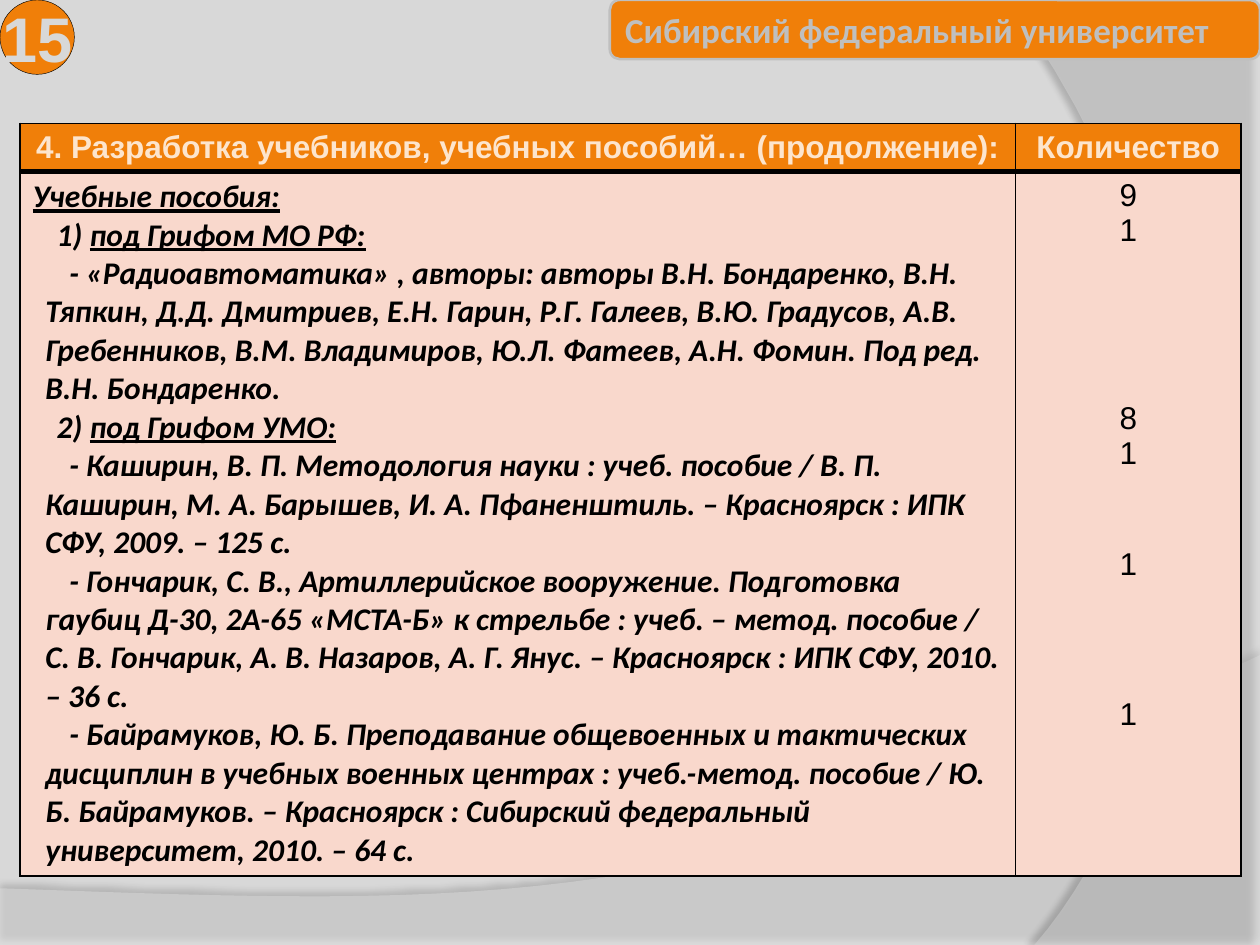
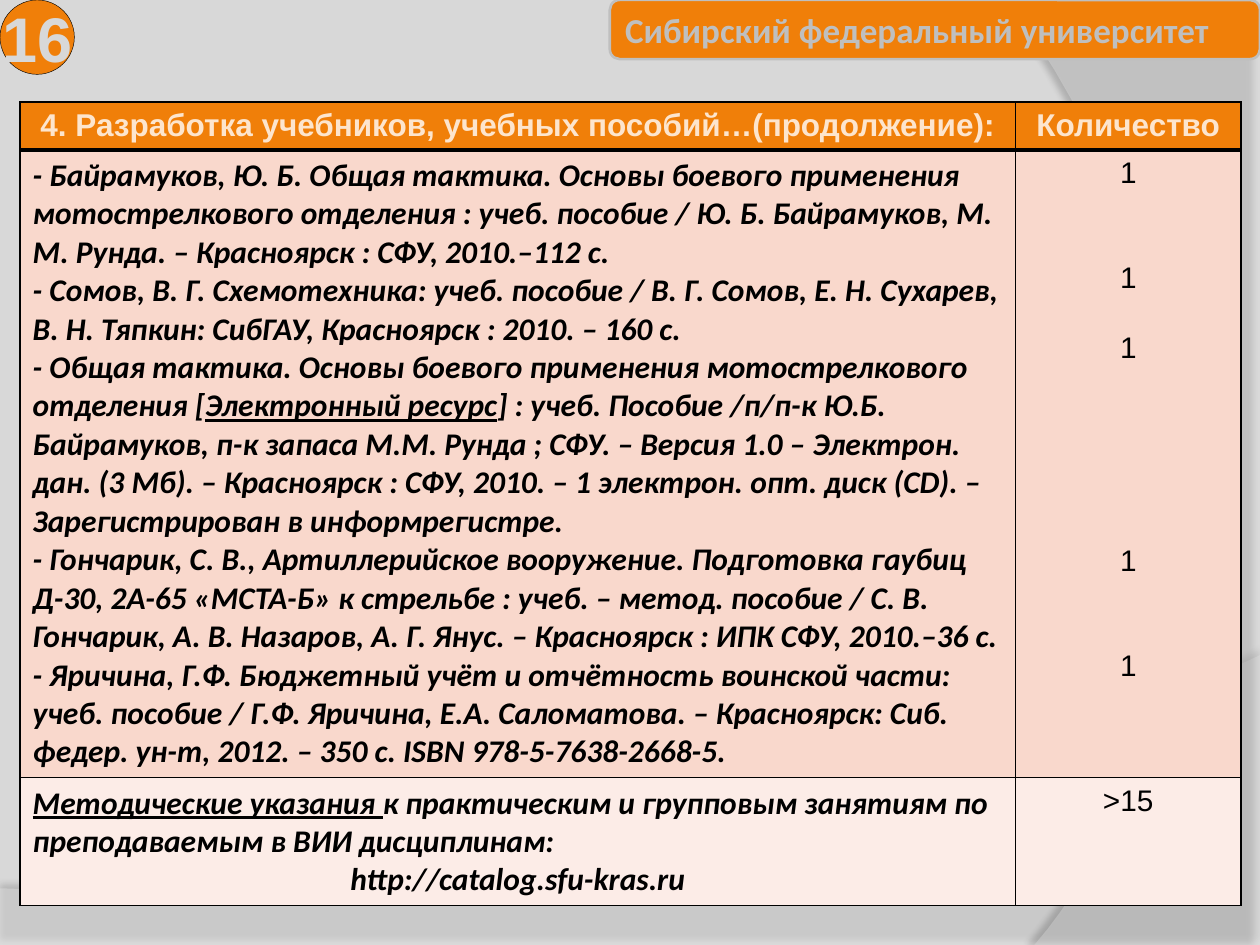
from dataclasses import dataclass

from lxml import etree
from pptx import Presentation
from pptx.dml import color
from pptx.enum import shapes, text
from pptx.oxml import ns
from pptx.util import Pt


@dataclass(frozen=True)
class Theme:
    background: str = "D8D8D8"
    accent: str = "F07F09"
    banner_edge: str = "BFBFBF"
    header_text: str = "FDE5CD"
    ink: str = "000000"
    body_fill: str = "F9D8CC"
    light_fill: str = "FCECE7"
    wave_fill: str = "E1E1E1"
    arc_fill: str = "DCDCDC"
    serial_font: str = "Arial"
    book_font: str = "Calibri"
    number_size: int = 36
    banner_size: int = 20
    table_size: int = 18


THEME = Theme()
CENTER = text.PP_ALIGN.CENTER
MIDDLE = text.MSO_ANCHOR.MIDDLE
COLUMNS = (568.8, 128.9)
TABLE_LEFT = 11.5
BLANK_LINE = 1.21
OUTLINE, HEADER_RULE = 1, 3

HANGING = (7.2, 13.7)
NUMBERED = (13.7, 0)
FLUSH = (0, 0)

GRIF_BOOKS = [
    ("_Учебные пособия:_", FLUSH),
    ("1) _под Грифом МО РФ:_", NUMBERED),
    ("- «Радиоавтоматика» , авторы: авторы В.Н. Бондаренко, В.Н. Тяпкин, Д.Д. Дмитриев, "
     "Е.Н. Гарин, Р.Г. Галеев, В.Ю. Градусов, А.В. Гребенников, В.М. Владимиров, "
     "Ю.Л. Фатеев, А.Н. Фомин. Под ред. В.Н. Бондаренко.", HANGING),
    ("2) _под Грифом УМО:_", NUMBERED),
    ("- Каширин, В. П. Методология науки : учеб. пособие / В. П. Каширин, М. А. Барышев, "
     "И. А. Пфаненштиль. – Красноярск : ИПК СФУ, 2009. – 125 с.", HANGING),
    ("- Гончарик, С. В., Артиллерийское вооружение. Подготовка гаубиц Д-30, 2А-65 «МСТА-Б» "
     "к стрельбе : учеб. – метод. пособие / С. В. Гончарик, А. В. Назаров, А. Г. Янус. "
     "– Красноярск : ИПК СФУ, 2010. – 36 с.", HANGING),
    ("- Байрамуков, Ю. Б. Преподавание общевоенных и тактических дисциплин в учебных "
     "военных центрах : учеб.-метод. пособие / Ю. Б. Байрамуков. – Красноярск : "
     "Сибирский федеральный университет, 2010. – 64 с.", HANGING),
]
GRIF_COUNTS = [("9", 0), ("1", 0), ("8", 4), ("1", 0), ("1", 2), ("1", 3)]

OTHER_BOOKS = [(book, FLUSH) for book in (
    "- Байрамуков, Ю. Б. Общая тактика. Основы боевого применения мотострелкового "
    "отделения : учеб. пособие / Ю. Б. Байрамуков, М. М. Рунда. – Красноярск : СФУ, "
    "2010.–112 с.",
    "- Сомов, В. Г. Схемотехника: учеб. пособие / В. Г. Сомов, Е. Н. Сухарев, "
    "В. Н. Тяпкин: СибГАУ, Красноярск : 2010. – 160 с.",
    "- Общая тактика. Основы боевого применения мотострелкового отделения "
    "[_Электронный ресурс_] : учеб. Пособие /п/п-к Ю.Б. Байрамуков, п-к запаса "
    "М.М. Рунда ; СФУ. – Версия 1.0 – Электрон. дан. (3 Мб). – Красноярск : СФУ, 2010. "
    "– 1 электрон. опт. диск (CD). – Зарегистрирован в информрегистре.",
    "- Гончарик, С. В., Артиллерийское вооружение. Подготовка гаубиц Д-30, 2А-65 «МСТА-Б» "
    "к стрельбе : учеб. – метод. пособие / С. В. Гончарик, А. В. Назаров, А. Г. Янус. "
    "– Красноярск : ИПК СФУ, 2010.–36 с.",
    "- Яричина, Г.Ф. Бюджетный учёт и отчётность воинской части: учеб. пособие / "
    "Г.Ф. Яричина, Е.А. Саломатова. – Красноярск: Сиб. федер. ун-т, 2012. – 350 с. "
    "ISBN 978-5-7638-2668-5.",
)]
OTHER_COUNTS = [("1", 0), ("1", 2), ("1", 1), ("1", 5), ("1", 2)]

GUIDELINES = [
    ("_Методические указания _к практическим и групповым занятиям по преподаваемым "
     "в ВИИ дисциплинам:", FLUSH),
    ("http://catalog.sfu-kras.ru", None),
]


def rgb(code):
    return color.RGBColor.from_string(code)


def style_font(font, name, size, ink, bold=False, italic=False):
    font.name, font.size, font.bold, font.italic = name, Pt(size), bold, italic
    font.color.rgb = rgb(ink)


def add_xml(parent, tag, **attributes):
    child = etree.SubElement(parent, ns.qn(tag))
    for key, value in attributes.items():
        child.set(key, str(value))
    return child


def curve(start, first, second, end, steps=32):
    for step in range(1, steps + 1):
        t = step / steps
        weights = ((1 - t) ** 3, 3 * t * (1 - t) ** 2, 3 * t * t * (1 - t), t ** 3)
        yield tuple(sum(w * p[axis] for w, p in zip(weights, (start, first, second, end)))
                    for axis in (0, 1))


def add_backdrop(slide, outline, fill, opacity, shade, distance, direction):
    builder = slide.shapes.build_freeform(*(Pt(v) for v in outline[0]), scale=1.0)
    builder.add_line_segments([(Pt(x), Pt(y)) for x, y in outline[1:]], close=True)
    sweep = builder.convert_to_shape()
    sweep.line.fill.background()
    sweep.fill.solid()
    sweep.fill.fore_color.rgb = rgb(fill)
    properties = sweep._element.spPr
    add_xml(properties.find(".//" + ns.qn("a:solidFill"))[0], "a:alpha", val=opacity * 1000)
    effects = add_xml(properties, "a:effectLst")
    shadow = add_xml(effects, "a:outerShdw", blurRad=Pt(4), dist=Pt(distance),
                     dir=direction * 60000, algn="ctr", rotWithShape=0)
    tint = add_xml(shadow, "a:srgbClr", val=THEME.ink)
    add_xml(tint, "a:alpha", val=shade * 1000)


def add_label(slide, kind, box, caption, edge, edge_width):
    label = slide.shapes.add_shape(kind, *(Pt(v) for v in box))
    label.shadow.inherit = False
    label.fill.solid()
    label.fill.fore_color.rgb = rgb(THEME.accent)
    label.line.color.rgb = rgb(edge)
    label.line.width = Pt(edge_width)
    frame = label.text_frame
    frame.text = caption
    frame.vertical_anchor = MIDDLE
    return frame


def add_frame(slide, number):
    slide.background.fill.solid()
    slide.background.fill.fore_color.rgb = rgb(THEME.background)
    wave = [(0, 507.6), (0, 540), (720, 540), (720, 374.4),
            *curve((720, 374.4), (402.5, 524.9), (281.5, 517.7), (0, 507.6))]
    arc = [(720, 1.4), (720, 540), (591.1, 540),
           *curve((591.1, 540), (673.2, 445.7), (733, 216), (576, 0))]
    add_backdrop(slide, wave, THEME.wave_fill, 45, 35, 3.5, 270)
    add_backdrop(slide, arc, THEME.arc_fill, 40, 45, 4, 180)

    banner = add_label(slide, shapes.MSO_SHAPE.ROUNDED_RECTANGLE, (348.5, 0, 371.5, 33.8),
                       "Сибирский федеральный университет", THEME.banner_edge, 1.5)
    banner.paragraphs[0].alignment = text.PP_ALIGN.LEFT
    style_font(banner.paragraphs[0].runs[0].font, THEME.book_font, THEME.banner_size,
               THEME.banner_edge, bold=True)

    badge = add_label(slide, shapes.MSO_SHAPE.OVAL, (0, 0, 42.5, 42.5), str(number),
                      THEME.ink, 0.25)
    badge.word_wrap = False
    badge.paragraphs[0].alignment = CENTER
    style_font(badge.paragraphs[0].runs[0].font, THEME.serial_font, THEME.number_size,
               THEME.background, bold=True)


def dress_cell(cell, fill, top, bottom):
    properties = cell._tc.get_or_add_tcPr()
    sides = {"a:lnL": OUTLINE, "a:lnR": OUTLINE, "a:lnT": top, "a:lnB": bottom}
    for side, width in sides.items():
        rule = add_xml(properties, side, w=Pt(width))
        add_xml(add_xml(rule, "a:solidFill"), "a:srgbClr", val=THEME.ink)
    cell.fill.solid()
    cell.fill.fore_color.rgb = rgb(fill)


def next_paragraph(frame, index):
    return frame.add_paragraph() if index else frame.paragraphs[0]


def write_header(cell, caption):
    cell.text_frame.text = caption
    cell.vertical_anchor = MIDDLE
    heading = cell.text_frame.paragraphs[0]
    heading.alignment = CENTER
    style_font(heading.runs[0].font, THEME.serial_font, THEME.table_size,
               THEME.header_text, bold=True)


def write_books(cell, books):
    for index, (entry, indent) in enumerate(books):
        book = next_paragraph(cell.text_frame, index)
        if indent is None:
            book.alignment = CENTER
        elif indent != FLUSH:
            properties = book._p.get_or_add_pPr()
            properties.set("marL", str(Pt(indent[0])))
            properties.set("indent", str(Pt(indent[1])))
        for part, wording in enumerate(entry.split("_")):
            if wording:
                run = book.add_run()
                run.text = wording
                style_font(run.font, THEME.book_font, THEME.table_size, THEME.ink, True, True)
                run.font.underline = part % 2 == 1


def write_counts(cell, counts, size):
    for index, (count, lines_skipped) in enumerate(counts):
        tally = next_paragraph(cell.text_frame, index)
        tally.text = count
        tally.alignment = CENTER
        if lines_skipped:
            tally.space_before = Pt(round(lines_skipped * size * BLANK_LINE, 1))
        style_font(tally.runs[0].font, THEME.serial_font, size, THEME.ink)


def add_book_table(slide, top, title, sections, heights, count_size):
    frame = slide.shapes.add_table(len(heights), 2, Pt(TABLE_LEFT), Pt(top),
                                   Pt(sum(COLUMNS)), Pt(sum(heights)))
    table = frame.table
    table.first_row = table.horz_banding = False
    for column, width in zip(table.columns, COLUMNS):
        column.width = Pt(width)
    for row, height in zip(table.rows, heights):
        row.height = Pt(height)

    for cell, caption in zip(table.rows[0].cells, (title, "Количество")):
        dress_cell(cell, THEME.accent, OUTLINE, HEADER_RULE)
        write_header(cell, caption)
    for index, (books, counts, fill) in enumerate(sections, 1):
        for cell in table.rows[index].cells:
            dress_cell(cell, fill, HEADER_RULE if index == 1 else OUTLINE, OUTLINE)
        write_books(table.cell(index, 0), books)
        write_counts(table.cell(index, 1), counts, count_size)


def main():
    deck = Presentation()
    deck.slide_width, deck.slide_height = Pt(720), Pt(540)
    blank = deck.slide_layouts[6]

    grif_slide = deck.slides.add_slide(blank)
    add_frame(grif_slide, 15)
    add_book_table(grif_slide, 70.5,
                   "4. Разработка учебников, учебных пособий… (продолжение):",
                   [(GRIF_BOOKS, GRIF_COUNTS, THEME.body_fill)],
                   (27.4, 396), THEME.table_size)

    other_slide = deck.slides.add_slide(blank)
    add_frame(other_slide, 16)
    add_book_table(other_slide, 58.3,
                   "4. Разработка учебников, учебных пособий…(продолжение):",
                   [(OTHER_BOOKS, OTHER_COUNTS, THEME.body_fill),
                    (GUIDELINES, [(">15", 0)], THEME.light_fill)],
                   (27.4, 354, 72), THEME.table_size - 1)

    deck.save("out.pptx")


if __name__ == "__main__":
    main()
